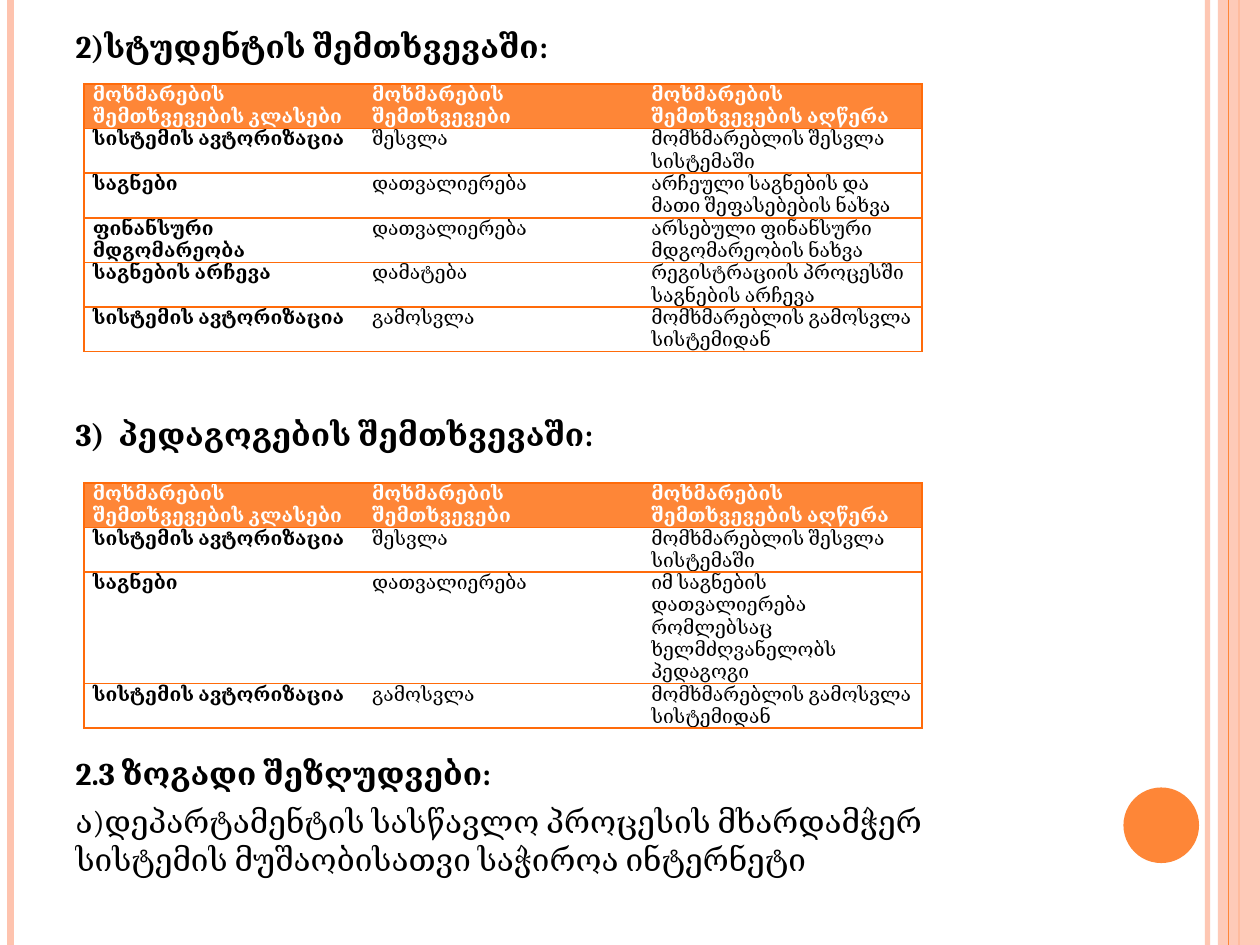
from lxml import etree
from pptx import Presentation
from pptx import util as u
from pptx.dml.color import RGBColor
from pptx.enum import shapes, text
from pptx.oxml import ns

ORANGE = RGBColor(0xFE, 0x86, 0x37)
PEACH = RGBColor(0xFE, 0xC3, 0xAE)
BORDER = RGBColor(0xFF, 0x6B, 0x0A)
BLACK = RGBColor(0, 0, 0)
WHITE = RGBColor(0xFF, 0xFF, 0xFF)

COLUMNS, ROWS = 120, 90
ROW = 4.24

HEADER = ("მოხმარების შემთხვევების კლასები", "მოხმარების შემთხვევები",
          "მოხმარების შემთხვევების აღწერა")
SIGN_IN = ("სისტემის ავტორიზაცია", "შესვლა", "მომხმარებლის შესვლა სისტემაში")
SIGN_OUT = ("სისტემის ავტორიზაცია", "გამოსვლა", "მომხმარებლის გამოსვლა სისტემიდან")
STUDENT_CASES = [
    HEADER,
    SIGN_IN,
    ("საგნები", "დათვალიერება", "არჩეული საგნების და მათი შეფასებების ნახვა"),
    ("ფინანსური მდგომარეობა", "დათვალიერება", "არსებული ფინანსური მდგომარეობის ნახვა"),
    ("საგნების არჩევა", "დამატება", "რეგისტრაციის პროცესში საგნების არჩევა"),
    SIGN_OUT,
]
TEACHER_CASES = [
    HEADER,
    SIGN_IN,
    ("საგნები", "დათვალიერება",
     "იმ საგნების დათვალიერება რომლებსაც ხელმძღვანელობს პედაგოგი"),
    SIGN_OUT,
]
BODY = [
    ("2)სტუდენტის შემთხვევაში:", True, 0),
    ("3) \u00a0პედაგოგების შემთხვევაში:".replace("\u00a0", " "), True, 200),
    ("2.3 ზოგადი შეზღუდვები:", True, 172),
    ("ა)დეპარტამენტის სასწავლო პროცესის მხარდამჭერ სისტემის "
     "მუშაობისათვი საჭიროა ინტერნეტი", False, 6),
]
BODY[1] = ("3)  პედაგოგების შემთხვევაში:", True, 200)


class SlideBuilder:
    font_name = "Cambria"

    def __init__(self, deck):
        self.deck = deck
        self.page = deck.slides.add_slide(deck.slide_layouts[1])
        title = self.page.shapes.title
        title._element.getparent().remove(title._element)

    def x(self, columns):
        return round(self.deck.slide_width * columns / COLUMNS)

    def y(self, rows):
        return round(self.deck.slide_height * rows / ROWS)

    def place(self, left, top, width, height):
        return self.x(left), self.y(top), self.x(width), self.y(height)

    def style(self, paragraph, size, color, bold):
        for span in paragraph.runs:
            span.font.name = self.font_name
            span.font.size = u.Pt(size)
            span.font.color.rgb = color
            span.font.bold = bold

    def fade(self, shape, percent):
        for color in shape._element.spPr.iter(ns.qn("a:srgbClr")):
            etree.SubElement(color, ns.qn("a:alpha"), val=str(percent * 1000))

    def stripe(self, column, color, width, opacity=100):
        line = self.page.shapes.add_connector(
            shapes.MSO_CONNECTOR.STRAIGHT,
            self.x(column), 0, self.x(column), self.y(ROWS))
        line.line.color.rgb = color
        line.line.width = u.Pt(width)
        etree.SubElement(line._element.spPr, ns.qn("a:effectLst"))
        if opacity < 100:
            self.fade(line, opacity)

    def shape(self, kind, area, color, opacity=100):
        shape = self.page.shapes.add_shape(kind, *self.place(*area))
        shape.shadow.inherit = False
        shape.fill.solid()
        shape.fill.fore_color.rgb = color
        shape.line.fill.background()
        if opacity < 100:
            self.fade(shape, opacity)

    def body(self, area, entries):
        box = self.page.placeholders[1]
        box.left, box.top, box.width, box.height = self.place(*area)
        self.page.shapes._spTree.append(box._element)
        frame = box.text_frame
        frame.text = "\n".join(entry[0] for entry in entries)
        frame.word_wrap = True
        frame.auto_size = text.MSO_AUTO_SIZE.NONE
        frame.vertical_anchor = text.MSO_ANCHOR.TOP
        for paragraph, (_, bold, gap) in zip(frame.paragraphs, entries):
            properties = paragraph._p.get_or_add_pPr()
            properties.set("marL", "0")
            properties.set("indent", "0")
            etree.SubElement(properties, ns.qn("a:buNone"))
            paragraph.space_before = u.Pt(gap)
            self.style(paragraph, 18, BLACK, bold)

    def border(self, cell, side, visible):
        properties = cell._tc.get_or_add_tcPr()
        line = etree.SubElement(properties, ns.qn("a:" + side), w=str(u.Pt(1)))
        if visible:
            fill = etree.SubElement(line, ns.qn("a:solidFill"))
            etree.SubElement(fill, ns.qn("a:srgbClr"), val=str(BORDER))
        else:
            etree.SubElement(line, ns.qn("a:noFill"))

    def table(self, left, top, width, heights, records):
        count = len(records[0])
        area = self.place(left, top, width, sum(heights))
        table = self.page.shapes.add_table(len(records), count, *area).table
        table.horz_banding = False
        for column in table.columns:
            column.width = self.x(width / count)
        for row, height in zip(table.rows, heights):
            row.height = self.y(height)
        for i, record in enumerate(records):
            for j, words in enumerate(record):
                cell = table.cell(i, j)
                cell.text = words
                cell.margin_left = cell.margin_right = u.Inches(0.07)
                cell.margin_top = cell.margin_bottom = 0
                self.border(cell, "lnL", j == 0)
                self.border(cell, "lnR", j == count - 1)
                self.border(cell, "lnT", True)
                self.border(cell, "lnB", True)
                cell.fill.solid()
                cell.fill.fore_color.rgb = WHITE if i else ORANGE
                self.style(cell.text_frame.paragraphs[0], 11,
                           BLACK if i else WHITE, i == 0 or j == 0)


def main():
    deck = Presentation()
    deck.slide_width, deck.slide_height = u.Inches(10), u.Inches(7.5)
    slide = SlideBuilder(deck)
    slide.stripe(115, PEACH, 3, 93)
    slide.stripe(1, PEACH, 4.5)
    slide.stripe(118, ORANGE, 1.5)
    slide.shape(shapes.MSO_SHAPE.RECTANGLE, (116, 0, 4, ROWS), PEACH, 87)
    slide.stripe(117, ORANGE, 0.75)
    slide.shape(shapes.MSO_SHAPE.OVAL, (107, 75, 7.2, 7.2), ORANGE)
    slide.body((6, 2, 98, 86), BODY)
    slide.table(8, 8, 79.8, [ROW] * 6, STUDENT_CASES)
    slide.table(8, 46, 79.8, [ROW, ROW, 2.5 * ROW, ROW], TEACHER_CASES)
    deck.save("out.pptx")


if __name__ == "__main__":
    main()
